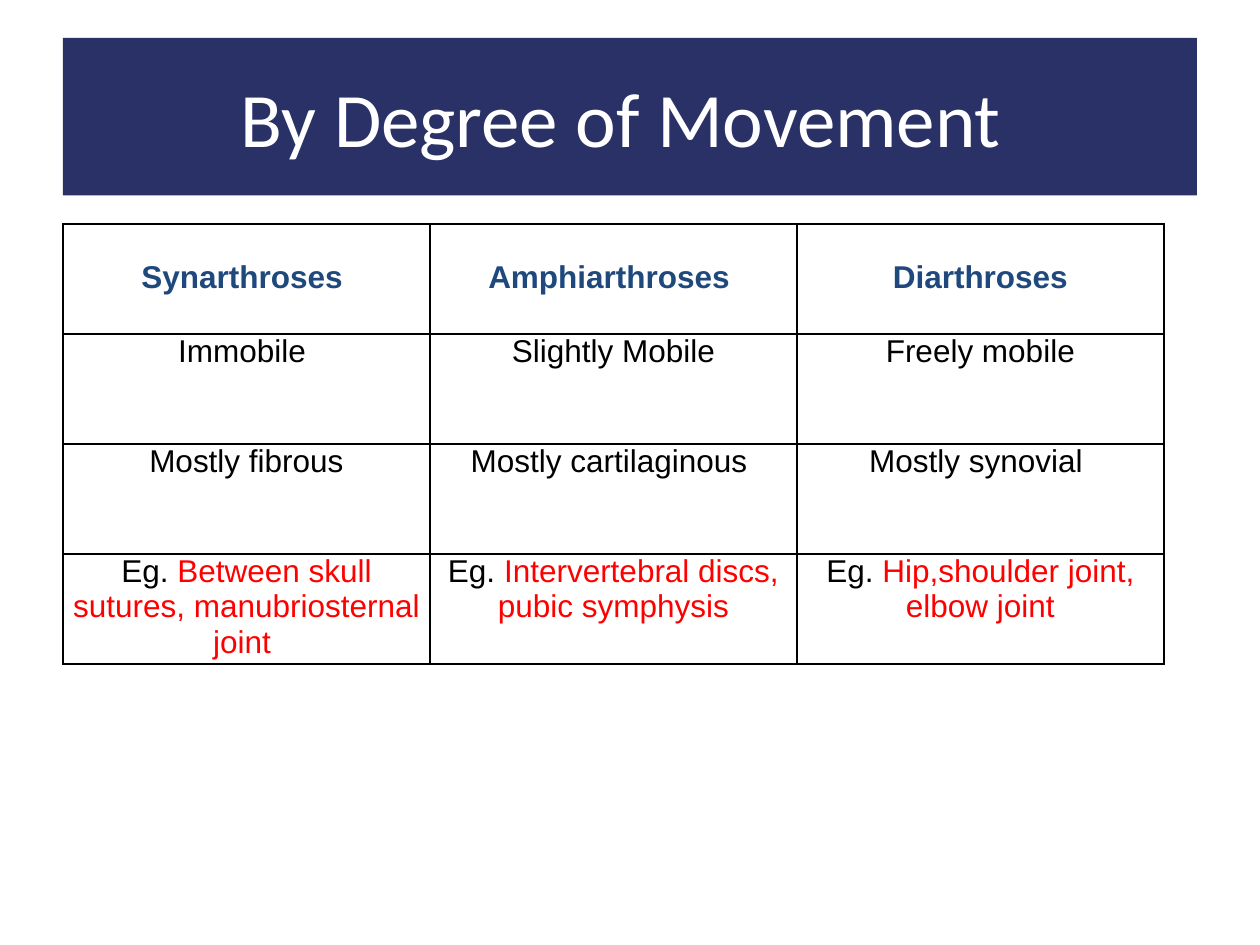
from lxml import etree
from pptx import Presentation
from pptx.dml.color import RGBColor
from pptx.enum.shapes import MSO_SHAPE
from pptx.enum.text import MSO_ANCHOR, PP_ALIGN
from pptx.oxml.ns import qn
from pptx.util import Pt

RECT = MSO_SHAPE.RECTANGLE
MIDDLE = MSO_ANCHOR.MIDDLE
CENTER = PP_ALIGN.CENTER
BLACK, RED, BLUE = "000000", "FF0000", "1F497D"


def color(code):
    return RGBColor.from_string(code)


def border(cell):
    props = cell._tc.get_or_add_tcPr()
    for i, side in enumerate(("a:lnL", "a:lnR", "a:lnT", "a:lnB")):
        line = etree.Element(qn(side), w=str(Pt(1)))
        fill = etree.SubElement(line, qn("a:solidFill"))
        etree.SubElement(fill, qn("a:srgbClr"), val=BLACK)
        props.insert(i, line)


deck = Presentation()
deck.slide_width, deck.slide_height = Pt(720), Pt(540)
slide = deck.slides.add_slide(deck.slide_layouts[6])

# Title band
band = slide.shapes.add_shape(RECT, Pt(36), Pt(21.6), Pt(648), Pt(90))
band.shadow.inherit = False
band.fill.solid()
band.fill.fore_color.rgb = color("293167")
band.line.fill.background()
frame = band.text_frame
frame.word_wrap = True
frame.vertical_anchor = MIDDLE
frame.margin_left = frame.margin_right = Pt(7.2)
frame.margin_top = frame.margin_bottom = Pt(7.2)
para = frame.paragraphs[0]
para.text = "By Degree of Movement "
para.alignment = CENTER
para.font.name, para.font.size = "Calibri", Pt(44)
para.font.color.rgb = color("FFFFFF")

# Table of joint types: each cell is a lead and an optional red part
rows = [
    [("Synarthroses ",), ("Amphiarthroses ",), ("Diarthroses",)],
    [("Immobile ",), ("Slightly Mobile",), ("Freely mobile",)],
    [("Mostly fibrous",), ("Mostly cartilaginous ",), ("Mostly synovial ",)],
    [("Eg. ", "Between skull sutures, manubriosternal joint "),
     ("Eg. ", "Intervertebral discs, pubic symphysis"),
     ("Eg. ", "Hip,shoulder joint, elbow joint")],
]
wide, high = 209.7, 62.86
table = slide.shapes.add_table(
    len(rows), 3, Pt(36), Pt(128), Pt(3 * wide), Pt(len(rows) * high)).table
for col in table.columns:
    col.width = Pt(wide)

for r, row in enumerate(rows):
    table.rows[r].height = Pt(high)
    head = r == 0
    for c, parts in enumerate(row):
        cell = table.cell(r, c)
        cell.fill.background()
        border(cell)
        cell.margin_left = cell.margin_right = cell.margin_bottom = 0
        cell.margin_top = Pt(20.7) if head else 0
        para = cell.text_frame.paragraphs[0]
        para.alignment = CENTER
        para.font.name, para.font.size = "Arial", Pt(18)
        para.font.bold = head
        for text, tint in zip(parts, (BLUE if head else BLACK, RED)):
            run = para.add_run()
            run.text = text
            # Explicit run fonts override the table style
            run.font.name, run.font.size = "Arial", Pt(18)
            run.font.bold = head
            run.font.color.rgb = color(tint)

deck.save("out.pptx")
